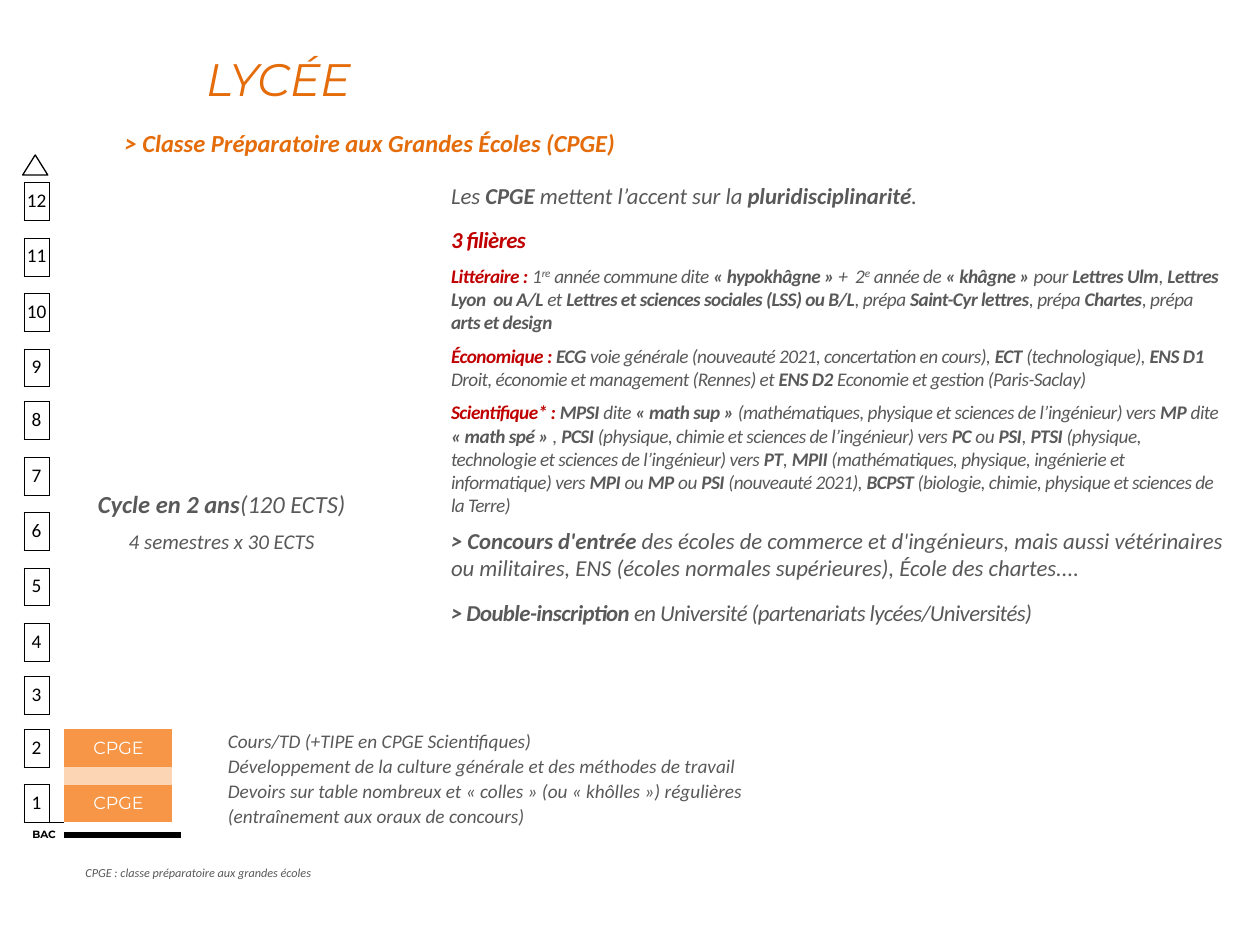
from dataclasses import dataclass

from lxml import etree
from pptx import Presentation
from pptx.dml.color import RGBColor
from pptx.enum.shapes import MSO_SHAPE
from pptx.enum.text import MSO_ANCHOR, MSO_AUTO_SIZE, PP_ALIGN
from pptx.oxml.ns import qn
from pptx.util import Inches, Pt

BLACK = RGBColor(0x00, 0x00, 0x00)
WHITE = RGBColor(0xFF, 0xFF, 0xFF)
GREY = RGBColor(0x59, 0x59, 0x59)
RED = RGBColor(0xC0, 0x00, 0x00)
TITLE_ORANGE = RGBColor(0xE4, 0x6C, 0x0A)
ORANGE = RGBColor(0xF7, 0x96, 0x46)
PALE_ORANGE = RGBColor(0xFC, 0xD5, 0xB5)

LEFT, CENTER = PP_ALIGN.LEFT, PP_ALIGN.CENTER
TOP, MIDDLE = MSO_ANCHOR.TOP, MSO_ANCHOR.MIDDLE
FIT_SHAPE = MSO_AUTO_SIZE.SHAPE_TO_FIT_TEXT
TRIANGLE = MSO_SHAPE.ISOSCELES_TRIANGLE
BODY_FONT, TITLE_FONT = "Calibri", "Montserrat"
NO_STYLE = "{2D5ABB26-0587-4C30-8999-92F81FD0307C}"

SEMESTERS = 12
BOX_HEIGHT = 0.3
GAPS = [0.12 if semester in (9, 4, 3) else 0.14 for semester in range(12, 1, -1)]
COLUMNS = [0.2, 0.12] + [0.24, 0.07] * 3
COURSE_COLUMNS = (2, 6)


@dataclass
class Line:
    """A paragraph; | toggles bold, ~ toggles bold red, ^ toggles superscript."""
    text: str
    size: float
    after: float = 0
    spacing: float = 0


@dataclass
class Box:
    left: float
    top: float
    width: float
    height: float
    lines: list[Line]
    color: RGBColor = GREY
    font: str = BODY_FONT
    bold: bool = False
    align: PP_ALIGN = LEFT
    side_inset: float = 0.1
    wrap: bool = True
    line_height: float | None = None


def write_line(paragraph, line: Line, *, color=GREY, font=BODY_FONT, bold=False,
               italic=True, align=LEFT, line_height=None) -> None:
    paragraph.alignment = align
    paragraph.space_after = Pt(line.after)
    if line_height:
        paragraph.line_spacing = Pt(line_height)
    state = {"|": bold, "~": False, "^": False}

    def add_run(text: str) -> None:
        if not text:
            return
        run = paragraph.add_run()
        run.text = text
        run.font.name, run.font.size = font, Pt(line.size)
        run.font.bold = state["|"] or state["~"]
        run.font.italic = italic
        run.font.color.rgb = RED if state["~"] else color
        properties = run.font._element
        if line.spacing:
            properties.set("spc", str(round(line.spacing * 100)))
        if state["^"]:
            properties.set("baseline", "30000")

    pending = ""
    for character in line.text:
        if character in state or character == "\n":
            add_run(pending)
            pending = ""
            if character == "\n":
                paragraph.add_line_break()
            else:
                state[character] = not state[character]
        else:
            pending += character
    add_run(pending)


def draw_box(slide, box: Box) -> None:
    shape = slide.shapes.add_textbox(Inches(box.left), Inches(box.top),
                                     Inches(box.width), Inches(box.height))
    frame = shape.text_frame
    frame.word_wrap, frame.auto_size = box.wrap, FIT_SHAPE
    frame.margin_left = frame.margin_right = Inches(box.side_inset)
    for index, line in enumerate(box.lines):
        paragraph = frame.add_paragraph() if index else frame.paragraphs[0]
        write_line(paragraph, line, color=box.color, font=box.font, bold=box.bold,
                   align=box.align, line_height=box.line_height)


def set_borders(cell, sides: str, points: float) -> None:
    properties = cell._tc.get_or_add_tcPr()
    for side in sides:
        border = etree.SubElement(properties, qn(f"a:ln{side}"), w=str(Pt(points)))
        fill = etree.SubElement(border, qn("a:solidFill"))
        etree.SubElement(fill, qn("a:srgbClr"), val=str(BLACK))


def fill_cell(cell, line: Line, *, color=BLACK, font=BODY_FONT, bold=False,
              anchor=MIDDLE, inset=0.0) -> None:
    cell.vertical_anchor = anchor
    cell.margin_top = cell.margin_bottom = Inches(inset)
    write_line(cell.text_frame.paragraphs[0], line, color=color, font=font,
               bold=bold, italic=False, align=CENTER)


def draw_timeline(slide) -> None:
    heights = [0.3, BOX_HEIGHT]
    for gap in GAPS:
        heights += [gap, BOX_HEIGHT]
    heights += [0.1, 0.1]
    frame = slide.shapes.add_table(len(heights), len(COLUMNS), Inches(0.19), Inches(1.15),
                                   Inches(sum(COLUMNS)), Inches(sum(heights)))
    table = frame.table
    table.first_row = table.horz_banding = False
    table._tbl.tblPr.find(qn("a:tableStyleId")).text = NO_STYLE
    for column, width in zip(table.columns, COLUMNS):
        column.width = Inches(width)
    for row, height in zip(table.rows, heights):
        row.height = Inches(height)

    # Tiny empty text keeps the narrow rows at their height
    for cell in table.iter_cells():
        cell.margin_left = cell.margin_right = cell.margin_top = cell.margin_bottom = 0
        etree.SubElement(cell.text_frame.paragraphs[0]._p, qn("a:endParaRPr"), sz="100")

    # Numbered semesters, from the last down to the first
    for index in range(SEMESTERS):
        cell = table.cell(1 + 2 * index, 0)
        set_borders(cell, "LRTB", 0.5)
        fill_cell(cell, Line(str(SEMESTERS - index), 11), anchor=TOP, inset=0.05)

    # Courses of the first two semesters
    first, last = COURSE_COLUMNS
    for row, color, label in ((21, ORANGE, "CPGE"), (22, PALE_ORANGE, ""), (23, ORANGE, "CPGE")):
        cell = table.cell(row, first)
        cell.merge(table.cell(row, last))
        cell.fill.solid()
        cell.fill.fore_color.rgb = color
        fill_cell(cell, Line(label, 10), color=WHITE, font=TITLE_FONT)

    # Starting line
    start = table.cell(24, 0)
    start.merge(table.cell(25, 1))
    set_borders(start, "T", 0.5)
    fill_cell(start, Line("BAC", 6), font=TITLE_FONT, bold=True)
    for column in range(2, len(COLUMNS)):
        set_borders(table.cell(24, column), "B", 4.5)
        set_borders(table.cell(25, column), "T", 4.5)


def draw_arrow_tip(slide) -> None:
    shape = slide.shapes.add_shape(TRIANGLE, Inches(0.18), Inches(1.23),
                                   Inches(0.2), Inches(0.16))
    shape.shadow.inherit = False
    shape.fill.background()
    shape.line.color.rgb = BLACK
    shape.line.width = Pt(0.75)


DETAILS = [
    Line("Les |CPGE| mettent l’accent sur la |pluridisciplinarité|.", 13, 10),
    Line("~3 filières~", 13, 6, -0.3),
    Line("~Littéraire : ~1^re^ année commune dite |« hypokhâgne » |+  2^e^ année de |« khâgne » |pour "
         "|Lettres Ulm|, |Lettres Lyon  ou A/L |et |Lettres et sciences sociales (LSS) ou B/L|, "
         "prépa |Saint-Cyr lettres|, prépa |Chartes|, prépa |arts et design|", 11, 6, -0.3),
    Line("~Économique : ~|ECG |voie générale (nouveauté 2021, concertation en cours), |ECT "
         "|(technologique), |ENS D1 |Droit, économie et management (Rennes) et |ENS D2| "
         "Economie et gestion (Paris-Saclay)", 11, 6, -0.3),
    Line("~Scientifique* : ~|MPSI| dite |« math sup » |(mathématiques, physique et sciences de "
         "l’ingénieur) vers |MP| dite |« math spé »| , |PCSI |(physique, chimie et sciences de "
         "l’ingénieur) vers |PC |ou |PSI|, |PTSI |(physique, technologie et sciences de l’ingénieur) "
         "vers |PT|, |MPII| (mathématiques, physique, ingénierie et informatique) vers |MPI| ou |MP| "
         "ou |PSI |(nouveauté 2021), |BCPST |(biologie, chimie, physique et sciences de la Terre)",
         11, 6, -0.3),
    Line("|> Concours d'entrée |des écoles de commerce et d'ingénieurs, mais aussi vétérinaires ou "
         "militaires, ENS (écoles normales supérieures), École des chartes....", 13, 10),
    Line("|> Double-inscription |en Université (partenariats lycées/Universités)", 13, 6, -0.3),
]
BOXES = [
    Box(1.46, 0.36, 1.5, 0.54, [Line("LYCÉE", 26)], TITLE_ORANGE, TITLE_FONT, align=CENTER),
    Box(0.89, 0.97, 6.79, 0.34, [Line("> Classe Préparatoire aux Grandes Écoles (CPGE)", 14, 6)],
        TITLE_ORANGE, bold=True),
    Box(0.58, 6.82, 2.28, 0.22, [Line("CPGE : classe préparatoire aux grandes écoles", 7)], wrap=False),
    Box(0.46, 3.83, 2.6, 0.62, [Line("|Cycle en 2 ans|(120 ECTS)", 14, 6),
                                Line("4 semestres x 30 ECTS", 12, 6)], align=CENTER, side_inset=0.04),
    Box(3.58, 1.39, 6.14, 4.15, DETAILS, side_inset=0),
    Box(1.71, 5.72, 4.9, 0.89, [Line(
        "Cours/TD (+TIPE en CPGE Scientifiques)\n"
        "Développement de la culture générale et des méthodes de travail\n"
        "Devoirs sur table nombreux et « colles » (ou « khôlles ») régulières "
        "(entraînement aux oraux de concours)", 11)], line_height=14.4),
]


def main() -> None:
    presentation = Presentation()
    presentation.slide_width, presentation.slide_height = Inches(10), Inches(7.5)
    slide = presentation.slides.add_slide(presentation.slide_layouts[6])
    draw_timeline(slide)
    draw_arrow_tip(slide)
    for box in BOXES:
        draw_box(slide, box)
    presentation.save("out.pptx")


if __name__ == "__main__":
    main()
